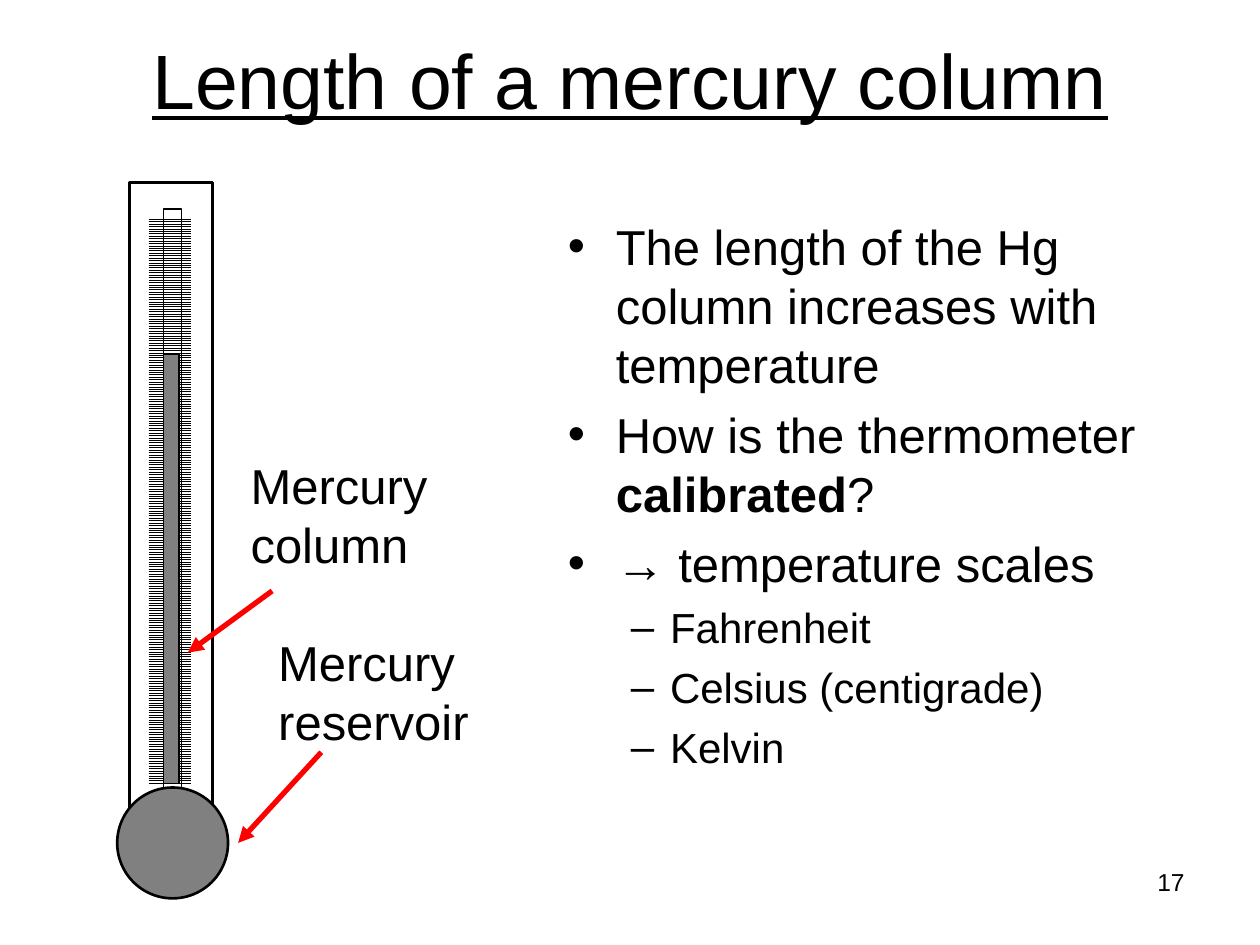
from lxml.etree import SubElement
from pptx import Presentation
from pptx.dml.color import RGBColor
from pptx.enum.dml import MSO_PATTERN
from pptx.enum.shapes import MSO_CONNECTOR, MSO_SHAPE
from pptx.enum.text import MSO_ANCHOR, PP_ALIGN
from pptx.oxml.ns import qn
from pptx.util import Inches, Pt

BLACK, WHITE, GRAY, RED = "000000", "FFFFFF", "808080", "FF0000"


def tint(code):
    return RGBColor.from_string(code)


def write(para, text, size=28, bold=False, under=False, font="Arial", color=BLACK):
    run = para.add_run()
    run.text = text
    face = run.font
    face.name, face.size = font, Pt(size)
    face.bold, face.underline = bold, under
    face.color.rgb = tint(color)


class Deck:
    """Holds the style and the current slide."""

    def __init__(self):
        self.show = Presentation()
        self.show.slide_width, self.show.slide_height = Inches(10), Inches(7.5)
        self.slide = self.show.slides.add_slide(self.show.slide_layouts[6])

    def shape(self, kind, box, fill=None, line=None):
        item = self.slide.shapes.add_shape(kind, *map(Inches, box))
        item.shadow.inherit = False
        if fill:
            item.fill.solid()
            item.fill.fore_color.rgb = tint(fill)
        else:
            item.fill.background()
        if line:
            item.line.color.rgb = tint(BLACK)
            item.line.width = Pt(line)
        else:
            item.line.fill.background()
        return item

    def scale(self, box):
        fill = self.shape(MSO_SHAPE.RECTANGLE, box).fill
        fill.patterned()
        fill.pattern = MSO_PATTERN.LIGHT_HORIZONTAL
        fill.fore_color.rgb = tint(BLACK)
        fill.back_color.rgb = tint(WHITE)

    def text(self, box, lines, align=PP_ALIGN.LEFT, anchor=MSO_ANCHOR.TOP, wrap=True, **form):
        frame = self.slide.shapes.add_textbox(*map(Inches, box)).text_frame
        frame.word_wrap, frame.vertical_anchor = wrap, anchor
        for num, line in enumerate(lines):
            para = frame.add_paragraph() if num else frame.paragraphs[0]
            para.alignment = align
            write(para, line, **form)

    def list(self, box, items):
        frame = self.slide.shapes.add_textbox(*map(Inches, box)).text_frame
        frame.word_wrap = True
        looks = [("•", 28, 0.38, 0.38, 6.4), ("–", 24, 0.81, 0.31, 5.5)]
        for num, (level, parts) in enumerate(items):
            mark, size, left, hang, gap = looks[level]
            para = frame.add_paragraph() if num else frame.paragraphs[0]
            para.level, para.space_before = level, Pt(gap)
            for part, bold in parts:
                write(para, part, size=size, bold=bold)
            props = para._p.get_or_add_pPr()
            props.set("marL", str(Inches(left)))
            props.set("indent", str(-Inches(hang)))
            SubElement(props, qn("a:buFont"), typeface="Arial")
            SubElement(props, qn("a:buChar"), char=mark)

    def arrow(self, start, end):
        item = self.slide.shapes.add_connector(
            MSO_CONNECTOR.STRAIGHT, *map(Inches, start + end))
        item.line.color.rgb = tint(RED)
        item.line.width = Pt(3)
        SubElement(item.line._get_or_add_ln(), qn("a:tailEnd"), type="triangle")
        SubElement(item._element.spPr, qn("a:effectLst"))


def main():
    deck = Deck()
    rect = MSO_SHAPE.RECTANGLE
    deck.scale((1.18, 1.72, 0.34, 4.51))
    deck.text((0, 0, 10, 1.25), ["Length of a mercury column"], size=44, under=True,
              align=PP_ALIGN.CENTER, anchor=MSO_ANCHOR.MIDDLE)
    deck.list((4.41, 1.67, 5.13, 4.95), [
        (0, [("The length of the Hg column increases with temperature", False)]),
        (0, [("How is the thermometer ", False), ("calibrated", True), ("?", False)]),
        (0, [("→ temperature scales", False)]),
        *((1, [(name, False)]) for name in ("Fahrenheit", "Celsius (centigrade)", "Kelvin")),
    ])
    deck.shape(rect, (1.03, 1.45, 0.66, 4.97), line=1.5)
    deck.shape(rect, (1.3, 2.81, 0.12, 3.41), fill=GRAY, line=0.75)
    deck.shape(rect, (1.3, 1.66, 0.14, 4.59), line=0.75)
    deck.shape(MSO_SHAPE.OVAL, (0.93, 6.25, 0.88, 0.88), fill=GRAY, line=1.5)
    deck.text((1.89, 3.57, 1.72, 1.03), ["Mercury", "column"], wrap=False)
    deck.text((2.11, 4.97, 1.72, 1.03), ["Mercury", "reservoir"], wrap=False)
    deck.arrow((2.16, 4.69), (1.49, 5.18))
    deck.arrow((2.55, 5.97), (1.89, 6.69))
    deck.text((7.17, 6.83, 2.33, 0.52), ["17"], size=14, align=PP_ALIGN.RIGHT)
    deck.show.save("out.pptx")


if __name__ == "__main__":
    main()
